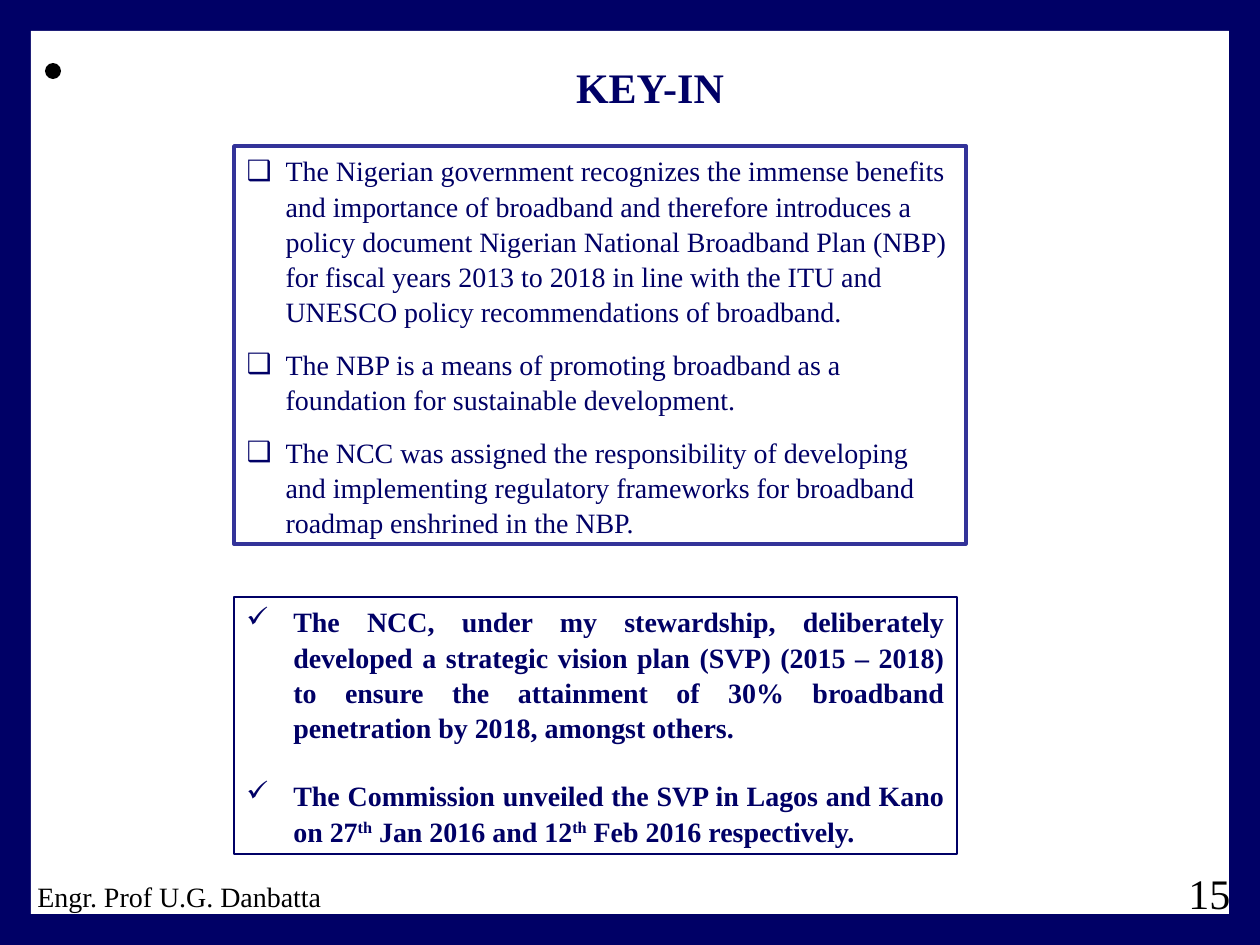
from pptx import Presentation, util as u
from pptx.dml.color import RGBColor
from pptx.enum import shapes, text
from pptx.oxml.ns import qn
from lxml import etree

THEME = {"face": "Times New Roman", "navy": "000066", "edge": "333399",
         "white": "FFFFFF", "black": "000000", "head": 24, "body": 16}
WIDE, HIGH, RIM = 1260, 945, 31
PX = u.Inches(10) // WIDE
ALIGN = text.PP_ALIGN

TITLE = "KEY-IN"
POLICY = [
    "The Nigerian government recognizes the immense benefits and importance of broadband "
    "and therefore introduces a policy document Nigerian National Broadband Plan (NBP) for "
    "fiscal years 2013 to 2018 in line with the ITU and UNESCO policy recommendations of "
    "broadband.",
    "The NBP is a means of promoting broadband as a foundation for sustainable development.",
    "The NCC was assigned the responsibility of developing and implementing regulatory "
    "frameworks for broadband roadmap enshrined in the NBP.",
]
# Text between carets is raised.
VISION = [
    "The NCC, under my stewardship, deliberately developed a strategic vision plan (SVP) "
    "(2015 – 2018) to ensure the attainment of 30% broadband penetration by 2018, amongst "
    "others.",
    "The Commission unveiled the SVP in Lagos and Kano on 27^th^ Jan 2016 and 12^th^ Feb "
    "2016 respectively.",
]
AUTHOR, PAGE = "Engr. Prof U.G. Danbatta", "15"


def color(name):
    return RGBColor.from_string(THEME[name])


def place(shape, box):
    for key, val in zip(("left", "top", "width", "height"), box):
        setattr(shape, key, val * PX)


def frame(shape, name, width):
    shape.line.color.rgb = color(name)
    shape.line.width = u.Pt(width)


def mark(para, sign, indent):
    """Give the paragraph a hanging bullet."""
    props = para._p.get_or_add_pPr()
    props.set("marL", str(indent * PX))
    props.set("indent", str(-indent * PX))
    etree.SubElement(props, qn("a:buChar"), char=sign)


def write(shape, items, size="body", tint="navy", bold=False, align=ALIGN.LEFT,
          sign=None, indent=0, gap=0, last=0, line=1.0):
    body = shape.text_frame
    body.word_wrap = True
    body.auto_size = text.MSO_AUTO_SIZE.NONE
    for i, item in enumerate(items):
        para = body.paragraphs[0] if i == 0 else body.add_paragraph()
        after = gap if i < len(items) - 1 else last
        look = {"alignment": align, "line_spacing": line,
                "space_before": u.Pt(0), "space_after": u.Pt(after)}
        for key, val in look.items():
            setattr(para, key, val)
        if sign:
            mark(para, sign, indent)
        for n, part in enumerate(item.split("^")):
            run = para.add_run()
            run.text = part
            font = {"name": THEME["face"], "size": u.Pt(THEME[size]), "bold": bold}
            for key, val in font.items():
                setattr(run.font, key, val)
            run.font.color.rgb = color(tint)
            if n % 2:
                run._r.get_or_add_rPr().set("baseline", "30000")


def solid(slide, kind, box, tint):
    shape = slide.shapes.add_shape(kind, *(v * PX for v in box))
    shape.shadow.inherit = False
    shape.fill.solid()
    shape.fill.fore_color.rgb = color(tint)
    shape.line.fill.background()
    return shape


def label(slide, box):
    return slide.shapes.add_textbox(*(v * PX for v in box))


def main():
    deck = Presentation()
    deck.slide_width, deck.slide_height = WIDE * PX, HIGH * PX
    slide = deck.slides.add_slide(deck.slide_layouts[1])
    back = slide.background.fill
    back.solid()
    back.fore_color.rgb = color("navy")

    sheet = solid(slide, shapes.MSO_SHAPE.RECTANGLE,
                  (RIM, RIM, WIDE - 2 * RIM, HIGH - 2 * RIM), "white")
    sheet._element.getparent().insert(2, sheet._element)  # behind the placeholders
    solid(slide, shapes.MSO_SHAPE.OVAL, (45, 63, 16, 16), "black")

    title, policy = slide.placeholders
    place(title, (246, 55, 808, 63))
    write(title, [TITLE], size="head", bold=True, align=ALIGN.CENTER)

    place(policy, (234, 146, 732, 398))
    frame(policy, "edge", 2)
    write(policy, POLICY, sign="❑", indent=39, gap=10, last=10, line=1.05)

    vision = label(slide, (234, 597, 723, 257))
    frame(vision, "navy", 0.75)
    write(vision, VISION, bold=True, align=ALIGN.JUSTIFY, sign="✓", indent=47,
          gap=19, line=1.05)

    write(label(slide, (25, 873, 667, 50)), [AUTHOR], tint="black")
    write(label(slide, (1176, 861, 136, 50)), [PAGE], size="head", tint="black")
    deck.save("out.pptx")


if __name__ == "__main__":
    main()
